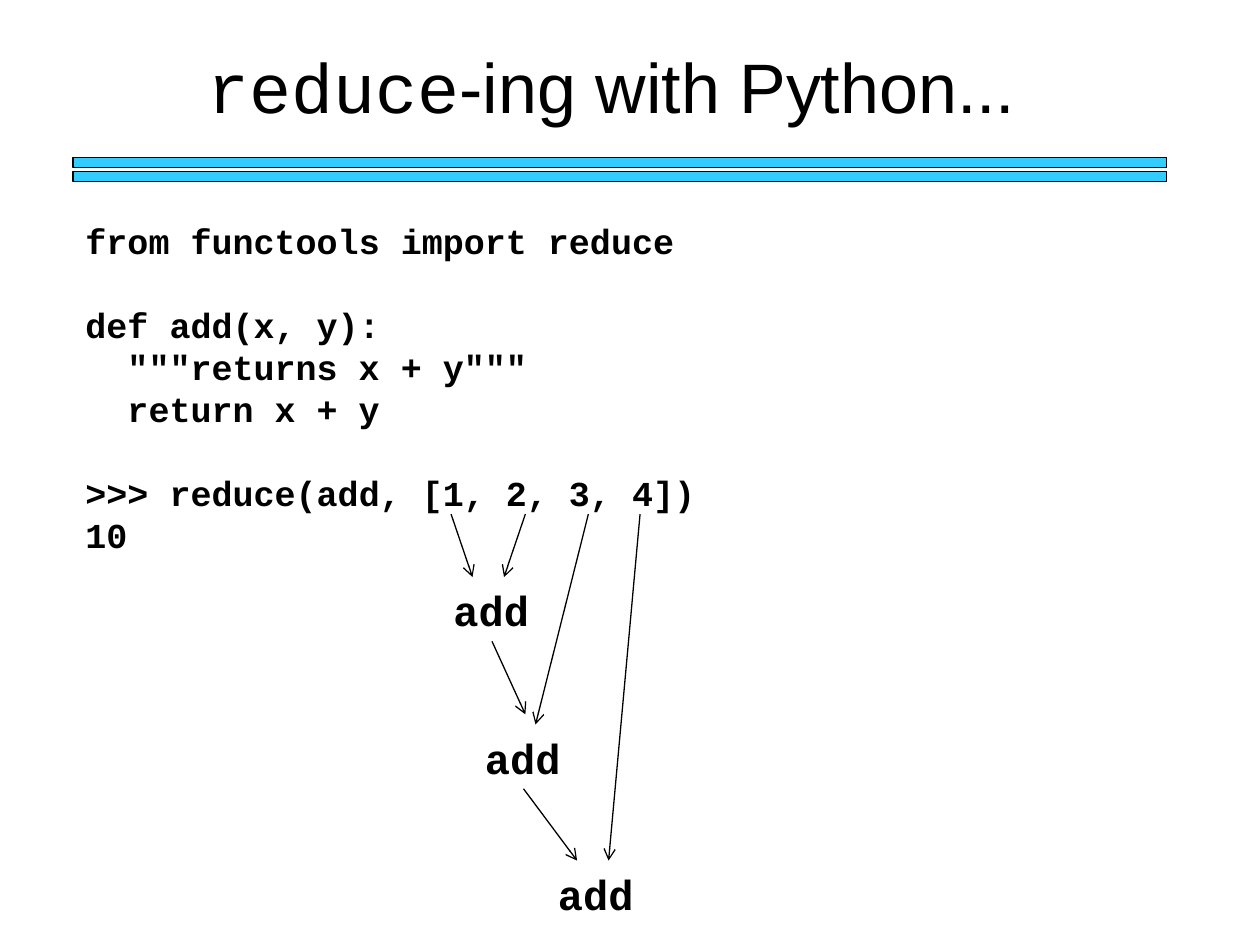
from pptx import Presentation
from pptx.dml.color import RGBColor
from pptx.enum.shapes import MSO_CONNECTOR, MSO_SHAPE
from pptx.enum.text import MSO_ANCHOR, PP_ALIGN
from pptx.oxml.ns import qn
from pptx.util import Inches, Pt
from lxml.etree import SubElement

THEME = {
    "ink": RGBColor(0x00, 0x00, 0x00),
    "bar": RGBColor(0x33, 0xCC, 0xFF),
    "sans": "Arial",
    "mono": "Courier New",
    "title": Pt(40),
    "code": Pt(20),
    "label": Pt(24),
    "code_line": Pt(24),
    "code_indent": Pt(24),
    "stroke": Pt(0.75),
}

TITLE = [("reduce", THEME["mono"]), ("-ing with Python...", THEME["sans"])]
TITLE_BOX = (0.48, 0.29, 8.75, 0.77)
BAR_TOPS = [1.25, 1.36]
CODE_BOX = (0.58, 1.67, 5.08, 2.79)
# Each block is set off by a gap; a line is (indent steps, text).
CODE = [
    [(0, "from functools import reduce")],
    [(0, "def add(x, y):"), (1, '"""returns x + y"""'), (1, "return x + y")],
    [(0, ">>> reduce(add, [1, 2, 3, 4])"), (0, "10")],
]

STEP_SIZE = (0.81, 0.51)
STEPS = [(3.5, 4.58), (3.75, 5.75), (4.33, 6.83)]
NUMBER_Y = 4.08
# x below the number, then the arrow's end at its add step
NUMBER_ARROWS = [
    (3.58, (3.75, 4.58)),
    (4.17, (4, 4.58)),
    (4.67, (4.25, 5.75)),
    (5.08, (4.83, 6.83)),
]
RESULT_ENDS = [(4.17, 5.67), (4.58, 6.83)]


def inches(values):
    return [Inches(v) for v in values]


def set_font(font, name, size, bold=False):
    font.name, font.size, font.bold = name, size, bold
    font.color.rgb = THEME["ink"]


def add_title(slide):
    sp = slide.shapes.title
    sp.left, sp.top, sp.width, sp.height = inches(TITLE_BOX)
    tf = sp.text_frame
    tf.vertical_anchor = MSO_ANCHOR.BOTTOM
    p = tf.paragraphs[0]
    p.alignment = PP_ALIGN.CENTER
    for text, name in TITLE:
        r = p.add_run()
        r.text = text
        set_font(r.font, name, THEME["title"])


def add_bars(slide):
    group = slide.shapes.add_group_shape()
    for top in BAR_TOPS:
        sp = group.shapes.add_shape(MSO_SHAPE.RECTANGLE, *inches((0.58, top, 8.68, 0.08)))
        sp.shadow.inherit = False
        sp.fill.solid()
        sp.fill.fore_color.rgb = THEME["bar"]
        sp.line.color.rgb = THEME["ink"]
        sp.line.width = THEME["stroke"]


def add_box(slide, box):
    sp = slide.shapes.add_textbox(*inches(box))
    sp.text_frame.word_wrap = True
    sp.text_frame.vertical_anchor = MSO_ANCHOR.BOTTOM
    return sp


def add_code(slide):
    tf = add_box(slide, CODE_BOX).text_frame
    p = tf.paragraphs[0]
    for b, block in enumerate(CODE):
        for n, (indent, text) in enumerate(block):
            if b or n:
                p = tf.add_paragraph()
            p.text = text
            p.line_spacing = THEME["code_line"]
            if b and n == 0:
                p.space_before = THEME["code_line"]
            if indent:
                pPr = p._p.get_or_add_pPr()
                pPr.set("marL", str(indent * THEME["code_indent"]))
                pPr.set("indent", "0")
            set_font(p.font, THEME["mono"], THEME["code"], bold=True)


def add_step(slide, left_top):
    sp = add_box(slide, left_top + STEP_SIZE)
    p = sp.text_frame.paragraphs[0]
    p.text = "add"
    set_font(p.font, THEME["mono"], THEME["label"], bold=True)
    return sp


def add_arrow(slide, start, end):
    arrow = slide.shapes.add_connector(MSO_CONNECTOR.STRAIGHT, *inches(start + end))
    arrow.line.color.rgb = THEME["ink"]
    arrow.line.width = THEME["stroke"]
    SubElement(arrow.line._get_or_add_ln(), qn("a:tailEnd"), type="arrow")
    SubElement(arrow._element.spPr, qn("a:effectLst"))
    return arrow


def main():
    prs = Presentation()
    prs.slide_width, prs.slide_height = Inches(10), Inches(7.5)
    s = prs.slides.add_slide(prs.slide_layouts[5])
    add_bars(s)
    add_code(s)
    add_title(s)
    steps = [add_step(s, at) for at in STEPS]
    for x, end in NUMBER_ARROWS:
        add_arrow(s, (x, NUMBER_Y), end)
    for (left, top), step, end in zip(STEPS, steps, RESULT_ENDS):
        start = (left + STEP_SIZE[0] / 2, top + STEP_SIZE[1])
        add_arrow(s, start, end).begin_connect(step, 2)
    prs.save("out.pptx")


if __name__ == "__main__":
    main()
